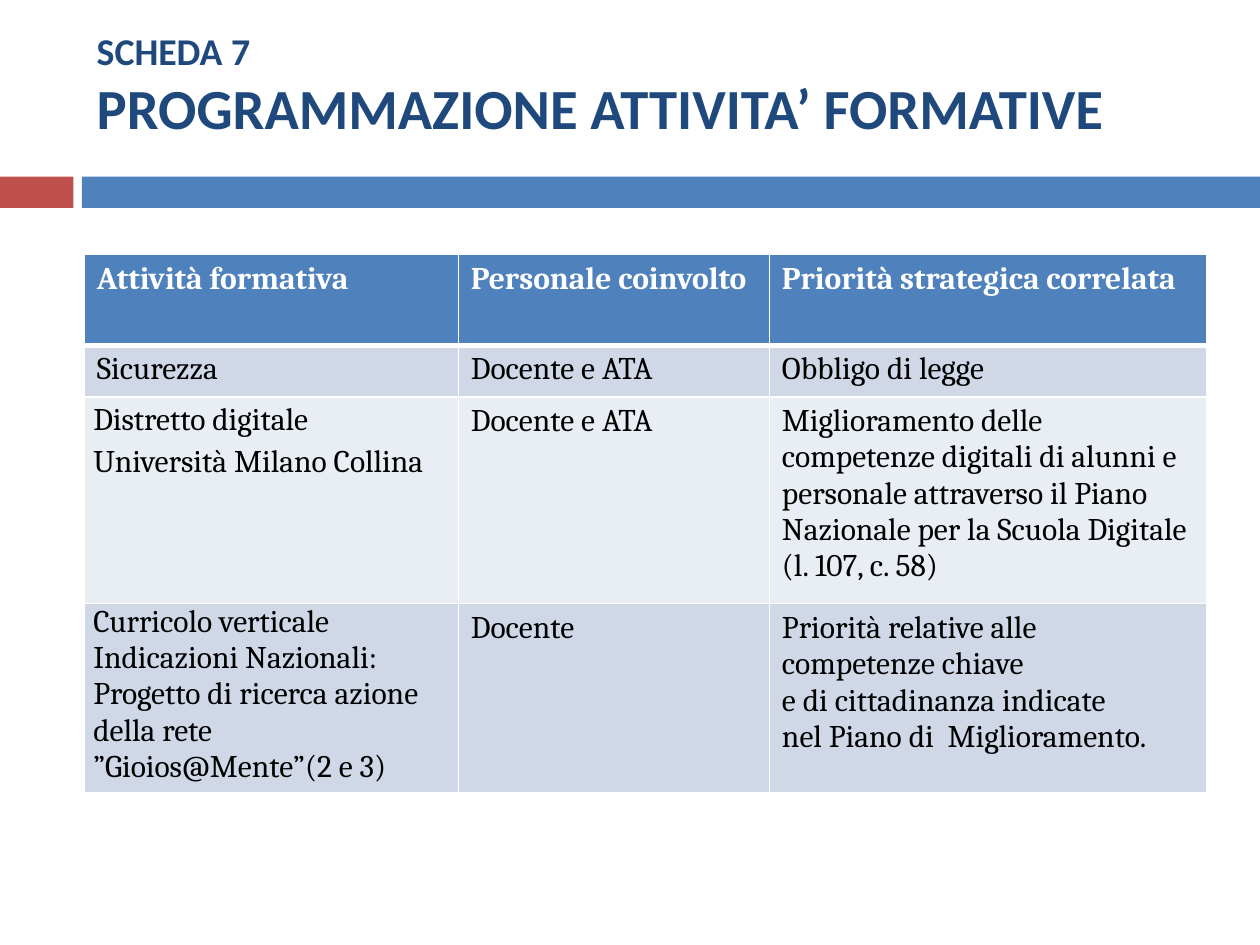
from lxml.etree import SubElement
from pptx import Presentation
from pptx.dml.color import RGBColor
from pptx.enum.shapes import MSO_SHAPE
from pptx.enum.text import MSO_ANCHOR, PP_ALIGN
from pptx.oxml.ns import qn
from pptx.util import Cm, Pt

WHITE, BLACK, NAVY, BLUE, RED = "FFFFFF", "000000", "1F497D", "4F81BD", "C0504D"
BAND_FILLS = ["D0D8E8", "E9EDF4"]

TITLE_LINES = [("SCHEDA 7", 21.6), ("PROGRAMMAZIONE ATTIVITA’ FORMATIVE", 32.4)]
# left, width, colour
STRIPES = [(0, 1.48, RED), (1.65, 23.75, BLUE)]

# Each cell is a list of paragraphs
ROWS = [
    [["Attività formativa"], ["Personale coinvolto"], ["Priorità strategica correlata"]],
    [["Sicurezza"], ["Docente e ATA"], ["Obbligo di legge"]],
    [
        ["Distretto digitale", "Università Milano Collina"],
        ["Docente e ATA"],
        ["Miglioramento delle competenze digitali di alunni e personale attraverso "
         "il Piano Nazionale per la Scuola Digitale (l. 107, c. 58)"],
    ],
    [
        ["Curricolo verticale Indicazioni Nazionali: Progetto di ricerca azione della rete",
         "”Gioios@Mente”(2 e 3)"],
        ["Docente"],
        ["Priorità relative alle competenze chiave", "e di cittadinanza indicate",
         "nel Piano di  Miglioramento."],
    ],
]
COLUMN_WIDTHS = [7.54, 6.27, 8.81]
ROW_HEIGHTS = [1.83, 1.04, 4.17, 3.38]
TIGHT_CELLS = [(2, 0), (3, 0)]
JUSTIFIED_CELL = (2, 0)


def rgb(value):
    return RGBColor.from_string(value)


def add_run(paragraph, text, size, font, color, bold):
    run = paragraph.add_run()
    run.text = text
    run.font.size = Pt(size)
    run.font.name = font
    run.font.bold = bold
    run.font.color.rgb = rgb(color)


def add_stripe(slide, left, width, color):
    stripe = slide.shapes.add_shape(MSO_SHAPE.RECTANGLE, Cm(left), Cm(3.56), Cm(width), Cm(0.63))
    stripe.shadow.inherit = False
    stripe.fill.solid()
    stripe.fill.fore_color.rgb = rgb(color)
    stripe.line.fill.background()


def add_title(slide):
    frame = slide.shapes.add_textbox(Cm(1.7), Cm(0.33), Cm(22.66), Cm(2.74)).text_frame
    frame.word_wrap = True
    frame.vertical_anchor = MSO_ANCHOR.MIDDLE
    paragraph = frame.paragraphs[0]
    for index, (text, size) in enumerate(TITLE_LINES):
        if index:
            paragraph.add_line_break()
        add_run(paragraph, text, size, "Calibri", NAVY, True)


def set_borders(cell, top, bottom):
    """Draw white borders; must run before the cell gets its fill."""
    properties = cell._tc.get_or_add_tcPr()
    for side, width in (("lnL", 1), ("lnR", 1), ("lnT", top), ("lnB", bottom)):
        line = SubElement(properties, qn(f"a:{side}"), w=str(Pt(width)))
        SubElement(SubElement(line, qn("a:solidFill")), qn("a:srgbClr"), val=WHITE)


def fill_cell(cell, row, column, texts):
    header = row == 0
    set_borders(cell, top=3 if row == 1 else 1, bottom=3 if header else 1)
    cell.fill.solid()
    cell.fill.fore_color.rgb = rgb(BLUE if header else BAND_FILLS[(row - 1) % 2])
    if (row, column) in TIGHT_CELLS:
        cell.margin_left = cell.margin_right = Cm(0.18)
        cell.margin_top = cell.margin_bottom = 0
    for index, text in enumerate(texts):
        frame = cell.text_frame
        paragraph = frame.add_paragraph() if index else frame.paragraphs[0]
        if (row, column) == JUSTIFIED_CELL:
            paragraph.alignment = PP_ALIGN.JUSTIFY
            paragraph.line_spacing = 1.15
        add_run(paragraph, text, 18, "Cambria", WHITE if header else BLACK, header)


def add_activity_table(slide):
    table = slide.shapes.add_table(
        len(ROWS), len(COLUMN_WIDTHS), Cm(1.7), Cm(5.13),
        Cm(sum(COLUMN_WIDTHS)), Cm(sum(ROW_HEIGHTS))).table
    table.horz_banding = False
    for column, width in zip(table.columns, COLUMN_WIDTHS):
        column.width = Cm(width)
    for row, height in zip(table.rows, ROW_HEIGHTS):
        row.height = Cm(height)
    for row, cells in enumerate(ROWS):
        for column, texts in enumerate(cells):
            fill_cell(table.cell(row, column), row, column, texts)


def main():
    presentation = Presentation()
    presentation.slide_width, presentation.slide_height = Cm(25.4), Cm(19.05)
    slide = presentation.slides.add_slide(presentation.slide_layouts[6])
    for stripe in STRIPES:
        add_stripe(slide, *stripe)
    add_title(slide)
    add_activity_table(slide)
    presentation.save("out.pptx")


if __name__ == "__main__":
    main()
